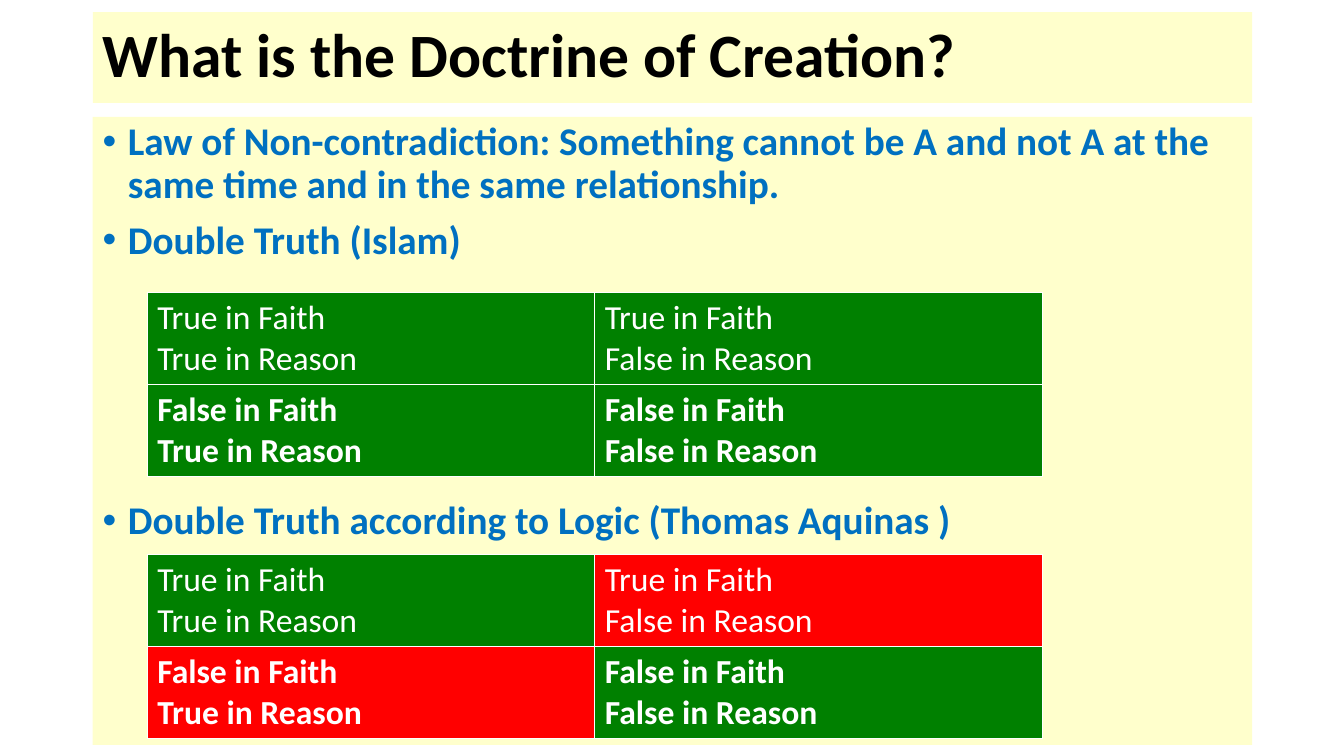
from dataclasses import dataclass

import pptx
import pptx.dml.color
import pptx.enum.text
import pptx.oxml
import pptx.oxml.ns
import pptx.util
from pptx.dml.color import RGBColor
from pptx.util import Inches

CREAM = RGBColor(0xFF, 0xFF, 0xCC)
BLACK = RGBColor(0x00, 0x00, 0x00)
BLUE = RGBColor(0x00, 0x70, 0xC0)
GREEN = RGBColor(0x00, 0x80, 0x00)
RED = RGBColor(0xFF, 0x00, 0x00)
WHITE = RGBColor(0xFF, 0xFF, 0xFF)
FONT = "Calibri"
PANEL_LEFT, PANEL_WIDTH = 0.92, 11.5
TABLE_LEFT, COLUMN_WIDTH, ROW_HEIGHT = 1.46, 4.44, 0.91
VERDICTS = ("True", "False")


@dataclass(frozen=True)
class Point:
    text: str
    space_before: float = 10


@dataclass(frozen=True)
class TruthTable:
    top: float
    mixed_color: RGBColor  # where faith and reason disagree


POINTS = (
    Point("Law of Non-contradiction: Something cannot be A and not A at the "
          "same time and in the same relationship."),
    Point("Double Truth (Islam)"),
    Point("Double Truth according to Logic (Thomas Aquinas )", 170),
)
TRUTH_TABLES = (TruthTable(5.5, RED), TruthTable(2.9, GREEN))


def add_run(paragraph, text: str, size: float, color: RGBColor, bold: bool) -> None:
    run = paragraph.add_run()
    run.text = text
    run.font.name = FONT
    run.font.size = pptx.util.Pt(size)
    run.font.bold = bold
    run.font.color.rgb = color


def place_panel(panel, top: float, height: float) -> None:
    """Position a cream panel and prepare its text frame."""
    panel.left, panel.top = Inches(PANEL_LEFT), Inches(top)
    panel.width, panel.height = Inches(PANEL_WIDTH), Inches(height)
    panel.fill.solid()
    panel.fill.fore_color.rgb = CREAM
    panel.text_frame.word_wrap = True
    panel.text_frame.auto_size = pptx.enum.text.MSO_AUTO_SIZE.NONE


def add_bullet(paragraph) -> None:
    properties = paragraph._p.get_or_add_pPr()
    properties.set("marL", str(Inches(0.25)))
    properties.set("indent", str(Inches(-0.25)))
    namespace = pptx.oxml.ns.nsdecls("a")
    properties.append(pptx.oxml.parse_xml(f'<a:buFont {namespace} typeface="Arial"/>'))
    properties.append(pptx.oxml.parse_xml(f'<a:buChar {namespace} char="•"/>'))


def add_borders(cell) -> None:
    properties = cell._tc.get_or_add_tcPr()
    for position, side in enumerate(("lnL", "lnR", "lnT", "lnB")):
        properties.insert(position, pptx.oxml.parse_xml(
            f'<a:{side} {pptx.oxml.ns.nsdecls("a")} w="{pptx.util.Pt(1)}">'
            f'<a:solidFill><a:srgbClr val="{WHITE}"/></a:solidFill></a:{side}>'))


def add_truth_table(slide, truth: TruthTable) -> None:
    count = len(VERDICTS)
    table = slide.shapes.add_table(
        count, count, Inches(TABLE_LEFT), Inches(truth.top),
        Inches(count * COLUMN_WIDTH), Inches(count * ROW_HEIGHT)).table
    table.first_row = table.horz_banding = False
    for row, faith in enumerate(VERDICTS):
        for column, reason in enumerate(VERDICTS):
            cell = table.cell(row, column)
            cell.fill.solid()
            cell.fill.fore_color.rgb = GREEN if faith == reason else truth.mixed_color
            add_borders(cell)
            frame = cell.text_frame
            bold = row > 0
            add_run(frame.paragraphs[0], f"{faith} in Faith", 24, WHITE, bold)
            add_run(frame.add_paragraph(), f"{reason} in Reason", 24, WHITE, bold)


def main() -> None:
    presentation = pptx.Presentation()
    presentation.slide_width = Inches(13.33)
    presentation.slide_height = Inches(7.5)
    slide = presentation.slides.add_slide(presentation.slide_layouts[5])

    title = slide.shapes.title
    place_panel(title, 0.12, 0.9)
    title.text_frame.vertical_anchor = pptx.enum.text.MSO_ANCHOR.MIDDLE
    heading = title.text_frame.paragraphs[0]
    heading.alignment = pptx.enum.text.PP_ALIGN.LEFT
    heading.line_spacing = 0.9
    add_run(heading, "What is the Doctrine of Creation?", 44, BLACK, True)

    body = slide.shapes.add_textbox(0, 0, 0, 0)
    place_panel(body, 1.16, 6.23)
    for index, point in enumerate(POINTS):
        frame = body.text_frame
        paragraph = frame.add_paragraph() if index else frame.paragraphs[0]
        paragraph.line_spacing = 0.9
        paragraph.space_before = pptx.util.Pt(point.space_before)
        add_bullet(paragraph)
        add_run(paragraph, point.text, 28, BLUE, True)

    for truth in TRUTH_TABLES:
        add_truth_table(slide, truth)
    presentation.save("out.pptx")


if __name__ == "__main__":
    main()
